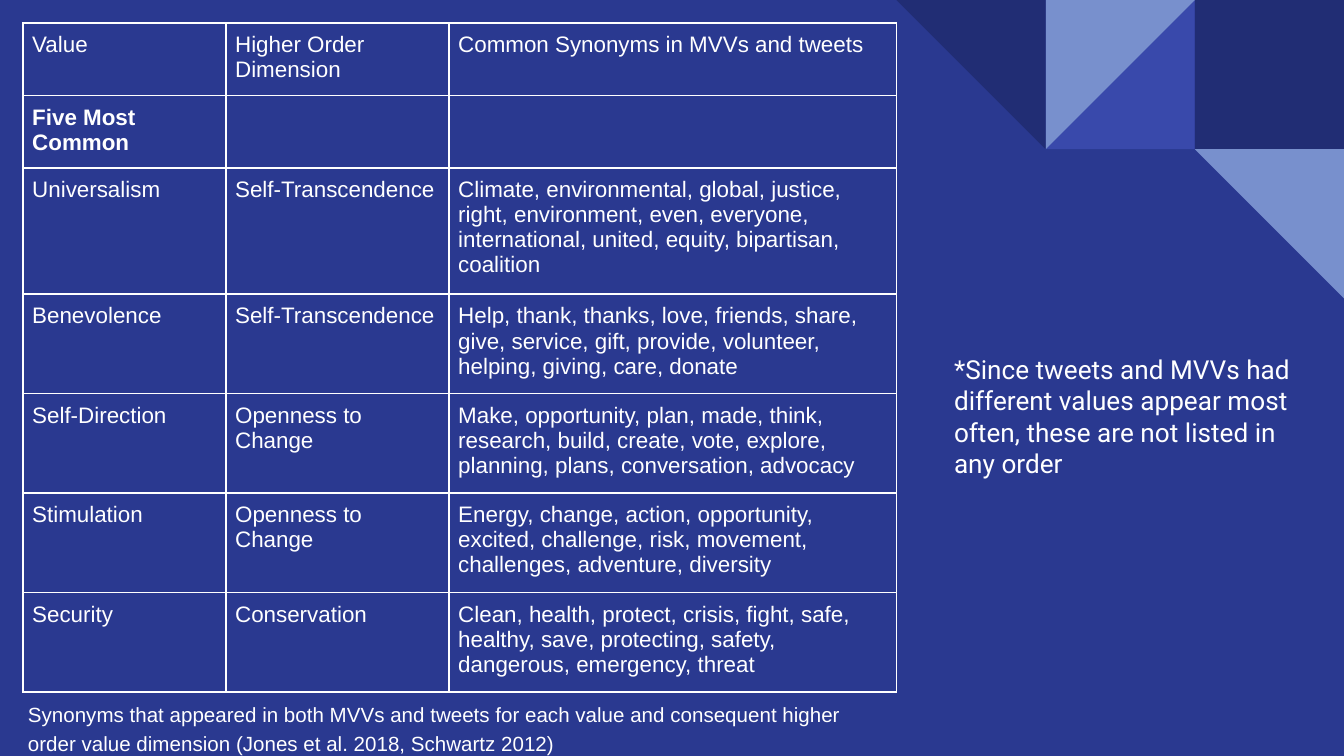
from dataclasses import dataclass

from lxml.etree import SubElement
from pptx import Presentation
from pptx.dml.color import RGBColor
from pptx.enum.shapes import MSO_SHAPE as Preset
from pptx.oxml import parse_xml
from pptx.oxml.ns import nsdecls, qn
from pptx.util import Inches, Pt


@dataclass(frozen=True)
class Theme:
    background: str = "2A3990"
    dark: str = "212D74"
    medium: str = "3949AB"
    light: str = "7890CD"
    white: str = "FFFFFF"
    table_font: str = "Arial"
    note_font: str = "Roboto"
    table_size: int = 12
    caption_size: int = 11
    note_size: int = 14
    border_width: int = 1


THEME = Theme()

VALUES = [
    ("Value", "Higher Order Dimension", "Common Synonyms in MVVs and tweets"),
    ("Five Most Common", "", ""),
    ("Universalism", "Self-Transcendence",
     "Climate, environmental, global, justice, right, environment, even, everyone, "
     "international, united, equity, bipartisan, coalition"),
    ("Benevolence", "Self-Transcendence",
     "Help, thank, thanks, love, friends, share, give, service, gift, provide, "
     "volunteer, helping, giving, care, donate"),
    ("Self-Direction", "Openness to Change",
     "Make, opportunity, plan, made, think, research, build, create, vote, explore, "
     "planning, plans, conversation, advocacy"),
    ("Stimulation", "Openness to Change",
     "Energy, change, action, opportunity, excited, challenge, risk, movement, "
     "challenges, adventure, diversity"),
    ("Security", "Conservation",
     "Clean, health, protect, crisis, fight, safe, healthy, save, protecting, safety, "
     "dangerous, emergency, threat"),
]
SECTION_ROW = 1
COLUMN_WIDTHS = [1.51, 1.66, 3.33]
ROW_LINES = [2, 2, 4, 3, 3, 3, 3]
LINE_HEIGHT, ROW_PADDING = 0.2, 0.14

CAPTION = ("Synonyms that appeared in both MVVs and tweets for each value and consequent "
           "higher order value dimension (Jones et al. 2018, Schwartz 2012)")
NOTE = ("*Since tweets and MVVs had different values appear most often, "
        "these are not listed in any order")

SLIDE_WIDTH = 10
SLIDE_HEIGHT = SLIDE_WIDTH * 9 / 16
TILE = 1.11
TILES = [
    (1, 0, Preset.RECTANGLE, 0, False, THEME.dark),
    (2, 0, Preset.RIGHT_TRIANGLE, 0, True, THEME.medium),
    (2, 0, Preset.RIGHT_TRIANGLE, 180, True, THEME.light),
    (3, 0, Preset.RIGHT_TRIANGLE, 180, False, THEME.dark),
    (1, 1, Preset.RIGHT_TRIANGLE, 180, False, THEME.light),
]


def style_paragraph(paragraph, font_name, size, bold=False):
    font = paragraph.font
    font.name, font.size, font.bold = font_name, Pt(size), bold
    font.color.rgb = RGBColor.from_string(THEME.white)


def add_tile(slide, from_right, row, preset, rotation, flipped, color):
    shape = slide.shapes.add_shape(preset, Inches(SLIDE_WIDTH - from_right * TILE),
                                   Inches(row * TILE), Inches(TILE), Inches(TILE))
    shape.shadow.inherit = False
    shape.fill.solid()
    shape.fill.fore_color.rgb = RGBColor.from_string(color)
    shape.line.fill.background()
    shape.rotation = rotation
    if flipped:
        shape.element.spPr.find(qn("a:xfrm")).set("flipH", "1")


def add_borders(cell):
    properties = cell._tc.get_or_add_tcPr()
    for position, side in enumerate(("lnL", "lnR", "lnT", "lnB")):
        line = parse_xml(f'<a:{side} {nsdecls("a")} w="{Pt(THEME.border_width)}"/>')
        fill = SubElement(line, qn("a:solidFill"))
        SubElement(fill, qn("a:srgbClr"), val=THEME.white)
        properties.insert(position, line)


def add_values_table(slide):
    heights = [lines * LINE_HEIGHT + ROW_PADDING for lines in ROW_LINES]
    table = slide.shapes.add_table(
        len(VALUES), len(COLUMN_WIDTHS), Inches(0.17), Inches(0.17),
        Inches(sum(COLUMN_WIDTHS)), Inches(sum(heights))).table
    table.first_row = table.horz_banding = False
    for column, width in zip(table.columns, COLUMN_WIDTHS):
        column.width = Inches(width)
    for row_index, (row, height, texts) in enumerate(zip(table.rows, heights, VALUES)):
        row.height = Inches(height)
        for cell, text in zip(row.cells, texts):
            cell.text = text
            cell.margin_left = cell.margin_right = Inches(0.07)
            cell.margin_top = cell.margin_bottom = Inches(0.07)
            cell.fill.background()
            add_borders(cell)
            style_paragraph(cell.text_frame.paragraphs[0], THEME.table_font,
                            THEME.table_size, row_index == SECTION_ROW)


def add_text(slide, box, text, font_name, size, line_spacing=1.0):
    frame = slide.shapes.add_textbox(*map(Inches, box)).text_frame
    frame.word_wrap = True
    frame.margin_left = frame.margin_right = Inches(0.1)
    frame.margin_top = frame.margin_bottom = Inches(0.1)
    frame.text = text
    paragraph = frame.paragraphs[0]
    paragraph.line_spacing = line_spacing
    style_paragraph(paragraph, font_name, size)


def main():
    presentation = Presentation()
    presentation.slide_width = Inches(SLIDE_WIDTH)
    presentation.slide_height = Inches(SLIDE_HEIGHT)
    slide = presentation.slides.add_slide(presentation.slide_layouts[6])
    slide.background.fill.solid()
    slide.background.fill.fore_color.rgb = RGBColor.from_string(THEME.background)
    for tile in TILES:
        add_tile(slide, *tile)
    add_values_table(slide)
    add_text(slide, (0.11, 5.1, 6.5, 0.6), CAPTION,
             THEME.table_font, THEME.caption_size, 1.15)
    add_text(slide, (7, 2.53, 2.79, 1.14), NOTE, THEME.note_font, THEME.note_size)
    presentation.save("out.pptx")


if __name__ == "__main__":
    main()
